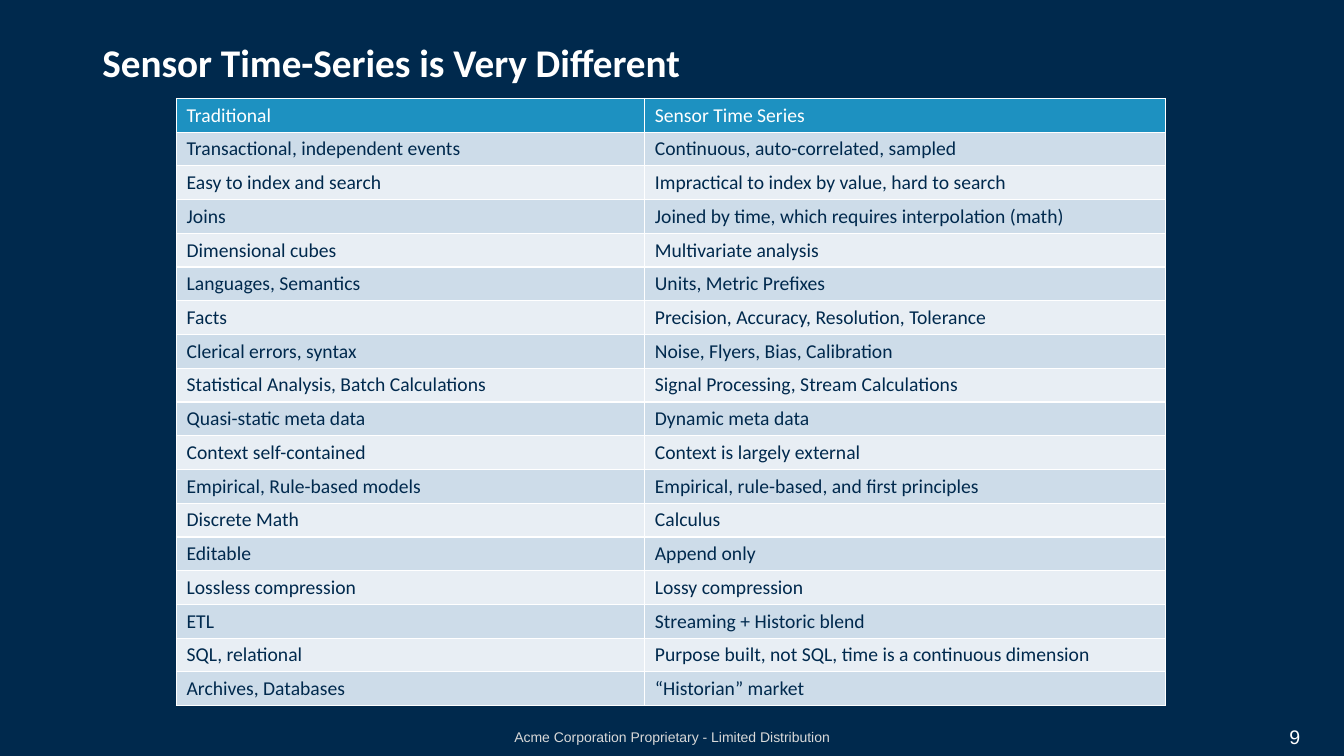
import pptx
import pptx.util
import pptx.dml.color
import pptx.enum.text
import lxml.etree
from pptx.util import Cm, Pt

TITLE = "Sensor Time-Series is Very Different"
FOOTER = "Acme Corporation Proprietary - Limited Distribution"
PAGE_NUMBER = "9"
COMPARISON = [
    ("Traditional", "Sensor Time Series"),
    ("Transactional, independent events", "Continuous, auto-correlated, sampled"),
    ("Easy to index and search", "Impractical to index by value, hard to search"),
    ("Joins", "Joined by time, which requires interpolation (math)"),
    ("Dimensional cubes", "Multivariate analysis"),
    ("Languages, Semantics", "Units, Metric Prefixes"),
    ("Facts", "Precision, Accuracy, Resolution, Tolerance"),
    ("Clerical errors, syntax", "Noise, Flyers, Bias, Calibration"),
    ("Statistical Analysis, Batch Calculations", "Signal Processing, Stream Calculations"),
    ("Quasi-static meta data", "Dynamic meta data"),
    ("Context self-contained", "Context is largely external"),
    ("Empirical, Rule-based models", "Empirical, rule-based, and first principles"),
    ("Discrete Math", "Calculus"),
    ("Editable", "Append only"),
    ("Lossless compression", "Lossy compression"),
    ("ETL", "Streaming + Historic blend"),
    ("SQL, relational", "Purpose built, not SQL, time is a continuous dimension"),
    ("Archives, Databases", "“Historian” market"),
]
COLORS = {
    "navy": "00294D",
    "white": "FFFFFF",
    "header": "1D91C1",
    "odd": "CDDCE9",
    "even": "E8EEF4",
    "footer": "D9D9D9",
}
COLUMN_WIDTHS = (11.8, 13.12)
ROW_HEIGHT = 0.85
ALIGN = pptx.enum.text.PP_ALIGN


def rgb(name):
    return pptx.dml.color.RGBColor.from_string(COLORS[name])


def write(frame, text, size=14, font="Calibri", color="white", bold=False,
          align=ALIGN.LEFT, spacing=None):
    paragraph = frame.paragraphs[0]
    paragraph.alignment = align
    paragraph.line_spacing = spacing
    run = paragraph.add_run()
    run.text = text
    run.font.size = Pt(size)
    run.font.name = font
    run.font.bold = bold
    run.font.color.rgb = rgb(color)


def add_label(slide, text, left, top, width, height, **style):
    box = slide.shapes.add_textbox(Cm(left), Cm(top), Cm(width), Cm(height))
    frame = box.text_frame
    frame.word_wrap = True
    frame.vertical_anchor = pptx.enum.text.MSO_ANCHOR.MIDDLE
    write(frame, text, **style)


def fill_cell(cell, color):
    properties = cell._tc.get_or_add_tcPr()
    for side in ("lnL", "lnR", "lnT", "lnB"):
        line = lxml.etree.SubElement(properties, pptx.oxml.ns.qn("a:" + side), w=str(Pt(1)))
        solid = lxml.etree.SubElement(line, pptx.oxml.ns.qn("a:solidFill"))
        lxml.etree.SubElement(solid, pptx.oxml.ns.qn("a:srgbClr"), val=COLORS["white"])
    cell.fill.solid()
    cell.fill.fore_color.rgb = rgb(color)


def add_comparison(slide):
    count = len(COMPARISON)
    table = slide.shapes.add_table(
        count, len(COLUMN_WIDTHS), Cm(4.45), Cm(2.48),
        Cm(sum(COLUMN_WIDTHS)), Cm(ROW_HEIGHT * count)).table
    for column, width in zip(table.columns, COLUMN_WIDTHS):
        column.width = Cm(width)
    for index, texts in enumerate(COMPARISON):
        table.rows[index].height = Cm(ROW_HEIGHT)
        band = "header" if index == 0 else ("even", "odd")[index % 2]
        for cell, text in zip(table.rows[index].cells, texts):
            fill_cell(cell, band)
            write(cell.text_frame, text, color="white" if index == 0 else "navy")


def main():
    deck = pptx.Presentation()
    deck.slide_width, deck.slide_height = Cm(33.87), Cm(19.05)
    slide = deck.slides.add_slide(deck.slide_layouts[6])
    slide.background.fill.solid()
    slide.background.fill.fore_color.rgb = rgb("navy")
    add_label(slide, TITLE, 2.33, 0.64, 29.21, 1.98, size=28, bold=True, spacing=0.9)
    add_comparison(slide)
    add_label(slide, FOOTER, 0, 18.19, 33.87, 0.76, size=10, font="Arial",
              color="footer", align=ALIGN.CENTER)
    add_label(slide, PAGE_NUMBER, 30.38, 18.16, 2.64, 0.79, font="Arial", align=ALIGN.RIGHT)
    deck.save("out.pptx")


if __name__ == "__main__":
    main()
